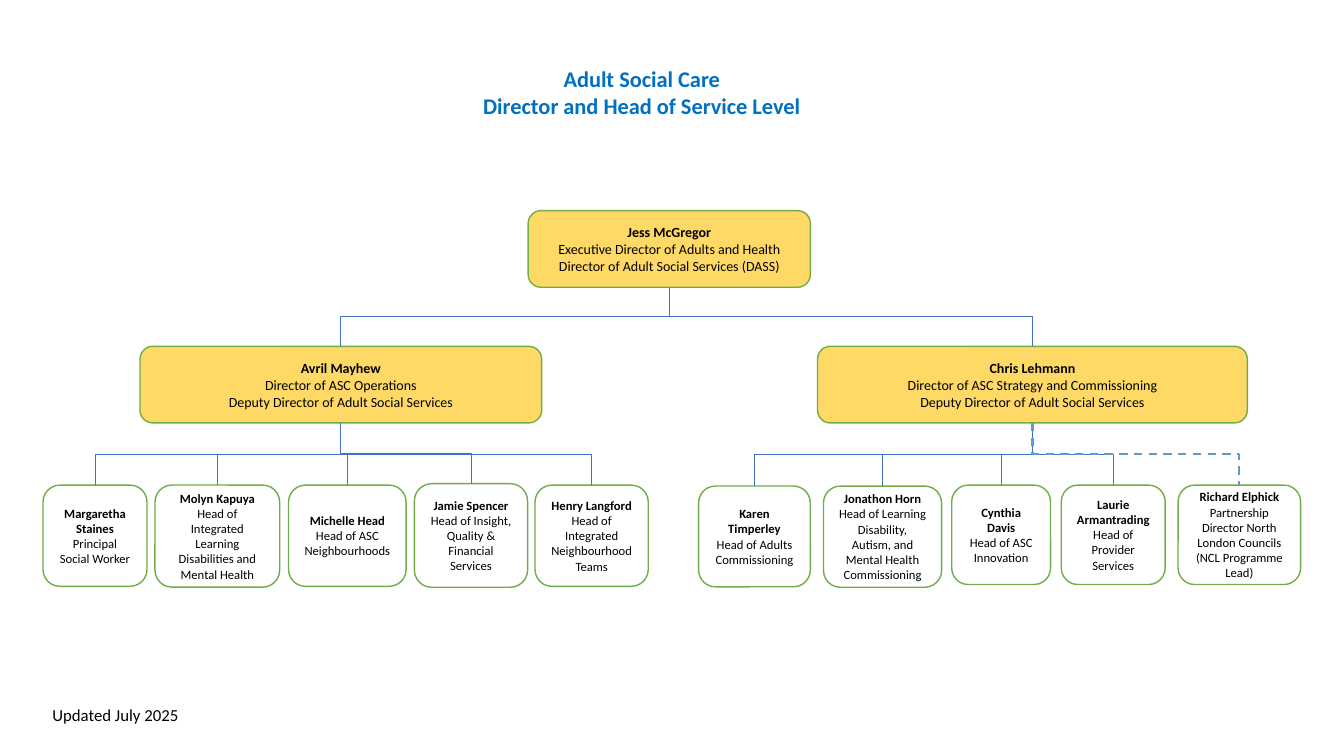
from dataclasses import dataclass

from lxml.etree import SubElement
from pptx import Presentation
from pptx.dml.color import RGBColor as RGB
from pptx.enum.dml import MSO_LINE as Dash
from pptx.enum.shapes import MSO_CONNECTOR as Conn, MSO_SHAPE as Shape
from pptx.enum.text import MSO_ANCHOR as Anchor, MSO_AUTO_SIZE as Fit, PP_ALIGN as Align
from pptx.oxml.ns import qn
from pptx.util import Pt


@dataclass(frozen=True)
class Theme:
    font: str = "Calibri"
    ink: RGB = RGB(0, 0, 0)
    title: RGB = RGB(0x00, 0x70, 0xC0)
    gold: RGB = RGB(0xFF, 0xD9, 0x66)
    white: RGB = RGB(0xFF, 0xFF, 0xFF)
    green: RGB = RGB(0x70, 0xAD, 0x47)
    link: RGB = RGB(0x44, 0x72, 0xC4)
    dotted: RGB = RGB(0x5B, 0x9B, 0xD5)
    title_size: int = 16
    note_size: int = 12
    lead_size: int = 10
    head_size: int = 9


class Chart:
    def __init__(self, slide, theme):
        self.slide, self.theme = slide, theme

    def label(self, frame, lines, size, color, bold, align=Align.CENTER):
        """Fill a frame with one paragraph per line; bold is the count of bold lines."""
        frame.word_wrap = True
        for i, line in enumerate(lines):
            para = frame.paragraphs[0] if i == 0 else frame.add_paragraph()
            para.text, para.alignment = line, align
            font = para.font
            font.name, font.size, font.bold = self.theme.font, Pt(size), i < bold
            font.color.rgb = color

    def title(self, lines, x, y, w, h):
        shape = self.slide.shapes.title
        shape.left, shape.top, shape.width, shape.height = map(Pt, (x, y, w, h))
        frame = shape.text_frame
        frame.auto_size, frame.vertical_anchor = Fit.NONE, Anchor.TOP
        self.label(frame, lines, self.theme.title_size, self.theme.title, len(lines))

    def note(self, text, x, y, w, h):
        box = self.slide.shapes.add_textbox(*map(Pt, (x, y, w, h)))
        self.label(box.text_frame, [text], self.theme.note_size, self.theme.ink, 0, Align.LEFT)

    def box(self, lines, x, y, w, h, fill, size):
        shape = self.slide.shapes.add_shape(Shape.ROUNDED_RECTANGLE, *map(Pt, (x, y, w, h)))
        shape.shadow.inherit = False
        shape.fill.solid()
        shape.fill.fore_color.rgb = fill
        shape.line.color.rgb, shape.line.width = self.theme.green, Pt(1)
        shape.text_frame.vertical_anchor = Anchor.MIDDLE
        self.label(shape.text_frame, lines, size, self.theme.ink, 1)
        return shape

    def lead(self, lines, *place):
        return self.box(lines, *place, self.theme.gold, self.theme.lead_size)

    def head(self, lines, *place):
        return self.box(lines, *place, self.theme.white, self.theme.head_size)

    def link(self, boss, staff, dashed=False):
        """Join bottom to top by an elbow, turned so that it leaves downwards."""
        elbow = self.slide.shapes.add_connector(Conn.ELBOW, 0, 0, 0, 0)
        elbow.begin_connect(boss, 2)
        elbow.end_connect(staff, 0)
        x1, x2 = (s.left + s.width // 2 for s in (boss, staff))
        y1, y2 = boss.top + boss.height, staff.top
        wide, high = abs(x2 - x1), y2 - y1
        elbow.left, elbow.top = (x1 + x2 - high) // 2, (y1 + y2 - wide) // 2
        elbow.width, elbow.height = high, wide
        right = x2 > x1
        props = elbow._element.spPr
        frame = props.find(qn("a:xfrm"))
        frame.set("rot", str((270 if right else 90) * 60000))
        frame.set("flipH", str(int(right)))
        frame.set("flipV", "0")
        elbow.line.color.rgb = self.theme.dotted if dashed else self.theme.link
        elbow.line.width = Pt(1.5 if dashed else 0.5)
        if dashed:
            elbow.line.dash_style = Dash.DASH
        SubElement(props, qn("a:effectLst"))


TOP = (["Jess McGregor", "Executive Director of Adults and Health",
        "Director of Adult Social Services (DASS)"], 377.3, 150.5, 201.6, 54.7)

# Each branch: director, then heads; each entry is lines, left, top, width, height
BRANCHES = [
    ((["Avril Mayhew", "Director of ASC Operations",
       "Deputy Director of Adult Social Services"], 100, 247.4, 286.9, 54.7),
     [(["Margaretha Staines", "Principal Social Worker"], 30.7, 346.5, 74.3, 72.3),
      (["Molyn Kapuya", "Head of Integrated Learning Disabilities and Mental Health"],
       110.7, 346.5, 89.1, 72.9),
      (["Michelle Head", "Head of ASC Neighbourhoods"], 206.1, 346.5, 84, 72.3),
      (["Jamie Spencer", "Head of Insight, Quality & Financial Services"],
       296, 345.5, 80.9, 74),
      (["Henry Langford", "Head of Integrated Neighbourhood Teams"],
       382.2, 346.5, 80.9, 72.3)]),
    ((["Chris Lehmann", "Director of ASC Strategy and Commissioning",
       "Deputy Director of Adult Social Services"], 584, 247.4, 307, 54.7),
     [(["Karen Timperley", "Head of Adults Commissioning"], 499, 347.2, 79.8, 72),
      (["Jonathon Horn",
        "Head of Learning Disability, Autism, and Mental Health Commissioning"],
       588.2, 347.2, 84.4, 72.3),
      (["Cynthia Davis", "Head of ASC Innovation"], 679.8, 346.5, 70.6, 71),
      (["Laurie Armantrading", "Head of Provider Services"], 758.1, 346.5, 74.2, 71),
      (["Richard Elphick", "Partnership Director North London Councils",
        "(NCL Programme Lead)"], 841.5, 346.5, 87.5, 71)]),
]
PARTNER = "Richard Elphick"


def main():
    deck = Presentation()
    deck.slide_width, deck.slide_height = Pt(960), Pt(540)
    chart = Chart(deck.slides.add_slide(deck.slide_layouts[5]), Theme())
    chart.title(["Adult Social Care", "Director and Head of Service Level"],
                321, 43.2, 275, 46)
    top = chart.lead(*TOP)
    for lead, heads in BRANCHES:
        boss = chart.lead(*lead)
        chart.link(top, boss)
        for head in heads:
            chart.link(boss, chart.head(*head), dashed=head[0][0] == PARTNER)
    chart.note("Updated July 2025", 30.3, 499.7, 118.8, 21.8)
    deck.save("out.pptx")


if __name__ == "__main__":
    main()
